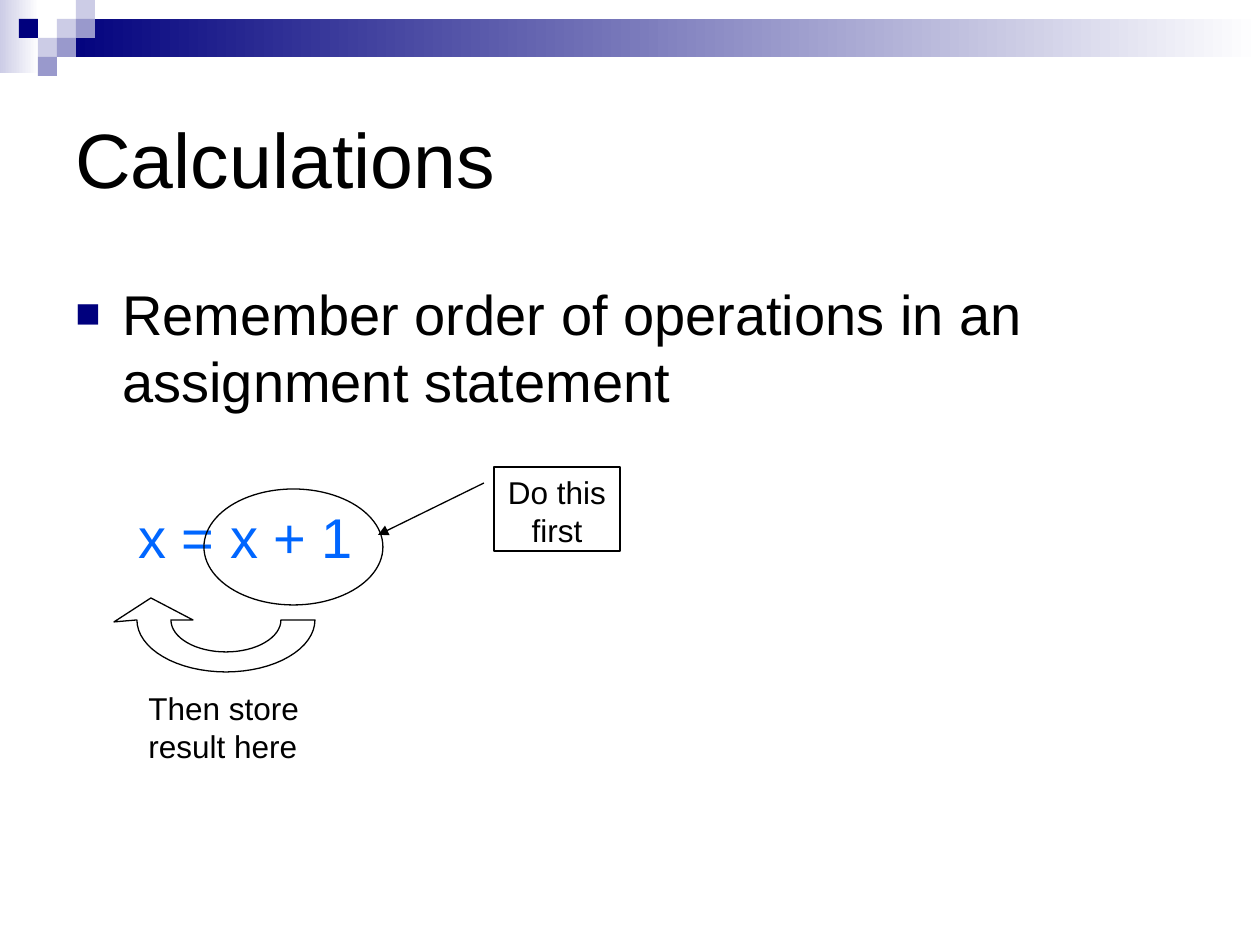
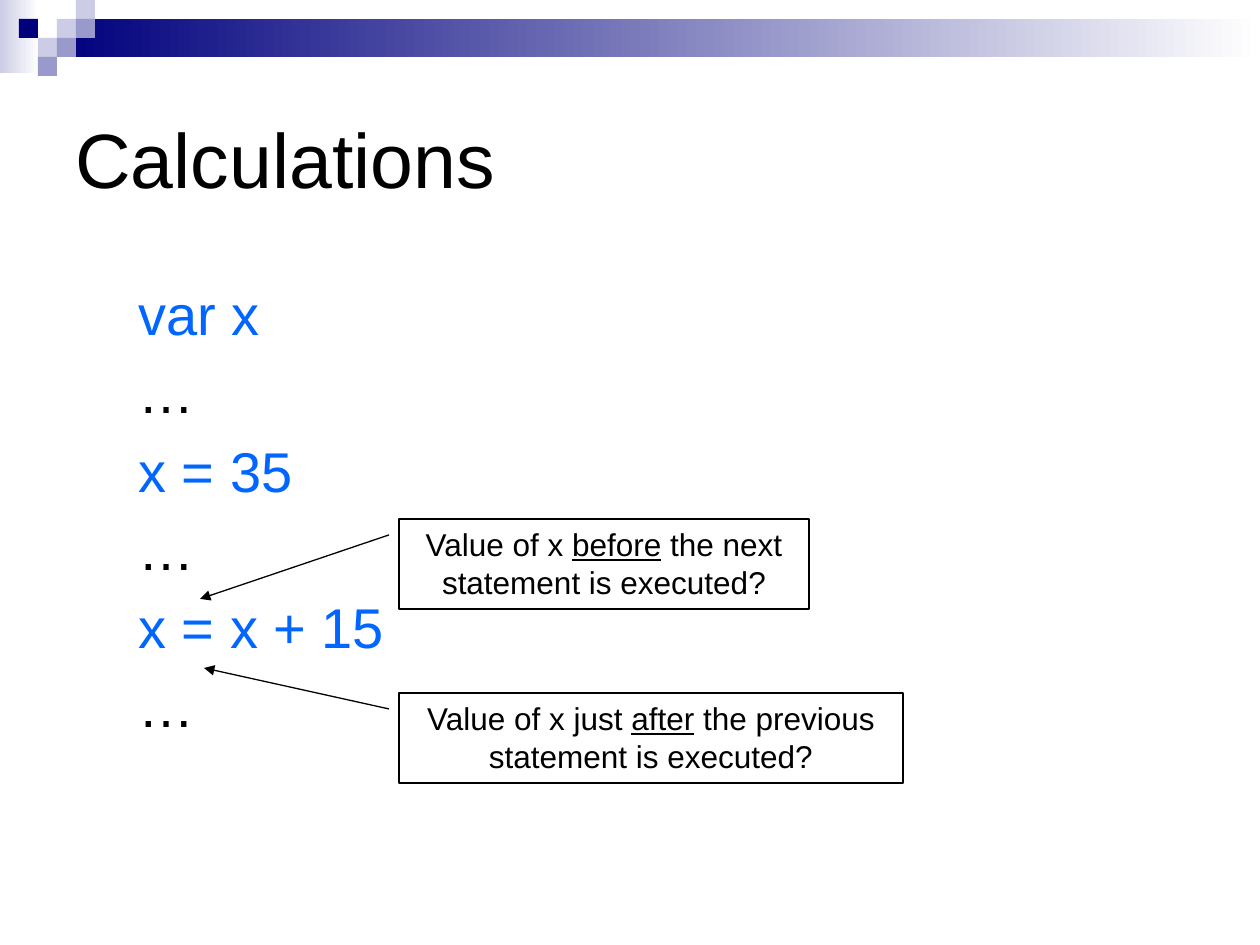
from math import cos, pi, sin

from lxml import etree
from pptx import Presentation
from pptx.dml.color import RGBColor
from pptx.enum.shapes import MSO_SHAPE
from pptx.enum.text import MSO_ANCHOR, PP_ALIGN
from pptx.oxml.ns import qn
from pptx.util import Pt

RECTANGLE, OVAL, CALLOUT = MSO_SHAPE.RECTANGLE, MSO_SHAPE.OVAL, MSO_SHAPE.LINE_CALLOUT_1
TOP, MIDDLE = MSO_ANCHOR.TOP, MSO_ANCHOR.MIDDLE
LEFT, CENTER = PP_ALIGN.LEFT, PP_ALIGN.CENTER

BLACK = RGBColor(0x00, 0x00, 0x00)
WHITE = RGBColor(0xFF, 0xFF, 0xFF)
NAVY = RGBColor(0x00, 0x00, 0x7D)
LAVENDER = RGBColor(0xCC, 0xCC, 0xE6)
PERIWINKLE = RGBColor(0x99, 0x99, 0xCC)
CODE_BLUE = RGBColor(0x00, 0x66, 0xFF)

FONT = "Arial"
EMU_PER_PX = 914400 / 126
SLIDE_SIZE = (1260, 945)
TITLE_BOX = (63, 63, 1134, 189)
BODY_BOX = (63, 273, 1134, 536)
TILE = 19
TILES = [(3, 0, LAVENDER), (1, 1, NAVY), (3, 1, LAVENDER), (4, 1, PERIWINKLE),
         (2, 2, LAVENDER), (3, 2, PERIWINKLE), (2, 3, PERIWINKLE)]
TILES[2:3] = [(3, 1, LAVENDER)]
TILES[0] = (4, 0, LAVENDER)
BODY_GAP = 6.4
CODE_INDENT = 63


def px(length):
    """Turn pixels into EMU."""
    return round(length * EMU_PER_PX)


def add_run(paragraph, text, size, color=BLACK, underline=False):
    """Add one run of text in the deck's font."""
    run = paragraph.add_run()
    run.text = text
    run.font.name = FONT
    run.font.size = Pt(size)
    run.font.color.rgb = color
    run.font.underline = underline


def add_text_area(slide, box, anchor=TOP):
    """Add a wrapping text box and return its frame."""
    frame = slide.shapes.add_textbox(*map(px, box)).text_frame
    frame.word_wrap = True
    frame.vertical_anchor = anchor
    return frame


def add_block(slide, box, *colors):
    """Add a borderless rectangle, plain or fading between two colours."""
    block = slide.shapes.add_shape(RECTANGLE, *map(px, box))
    block.shadow.inherit = False
    block.line.fill.background()
    if len(colors) == 1:
        block.fill.solid()
        block.fill.fore_color.rgb = colors[0]
        return
    block.fill.gradient()
    block.fill.gradient_angle = 0
    for stop, color in zip(block.fill.gradient_stops, colors):
        stop.color.rgb = color


def outline(shape):
    """Leave a shape unfilled with a thin black line."""
    shape.shadow.inherit = False
    shape.fill.background()
    shape.line.color.rgb = BLACK
    shape.line.width = Pt(0.75)


def add_header(slide):
    """Draw the fading bands and the tile pattern over them."""
    add_block(slide, (0, 0, 39, 73), LAVENDER, WHITE)
    add_block(slide, (3 * TILE, TILE, SLIDE_SIZE[0] - 3 * TILE, 2 * TILE), NAVY, WHITE)
    for column, row, color in TILES:
        add_block(slide, (column * TILE, row * TILE, TILE, TILE), color)


def add_body_line(frame, text, color=BLACK, gap=BODY_GAP, indent=CODE_INDENT):
    """Add a paragraph to the body and return it."""
    paragraph = frame.paragraphs[0]
    if paragraph.runs:
        paragraph = frame.add_paragraph()
    paragraph.space_before = Pt(gap)
    properties = paragraph._p.get_or_add_pPr()
    properties.set("marL", str(px(indent)))
    properties.set("indent", "0")
    add_run(paragraph, text, 32, color)
    return paragraph


def add_bullet(paragraph, hang):
    """Hang a small navy square in front of a paragraph."""
    properties = paragraph._p.get_or_add_pPr()
    properties.set("indent", str(-px(hang)))
    color = etree.SubElement(properties, qn("a:buClr"))
    etree.SubElement(color, qn("a:srgbClr"), val=str(NAVY))
    etree.SubElement(properties, qn("a:buSzPct"), val="75000")
    etree.SubElement(properties, qn("a:buFont"), typeface=FONT)
    etree.SubElement(properties, qn("a:buChar"), char="■")


def add_callout(slide, box, tip, parts):
    """Add a bordered note with an arrow to tip; parts alternate plain and underlined."""
    left, top, width, height = box
    callout = slide.shapes.add_shape(CALLOUT, *map(px, box))
    outline(callout)
    tail_start = (left - 10, top + 16)
    ends = [((y - top) / height, (x - left) / width) for x, y in (tail_start, tip)]
    for index, value in enumerate(ends[0] + ends[1]):
        callout.adjustments[index] = value
    etree.SubElement(callout.line._get_or_add_ln(), qn("a:tailEnd"), type="triangle")
    frame = callout.text_frame
    frame.word_wrap = True
    frame.vertical_anchor = TOP
    note = frame.paragraphs[0]
    note.alignment = CENTER
    for index, text in enumerate(parts):
        add_run(note, text, 18, underline=index % 2 == 1)


def half_ellipse(center, radii, steps=32):
    """List points along the lower half of an ellipse, right to left."""
    angles = [pi * step / steps for step in range(steps + 1)]
    return [(center[0] + radii[0] * cos(a), center[1] + radii[1] * sin(a)) for a in angles]


def add_store_arrow(slide, left, top):
    """Draw the curved arrow that leads back to the variable."""
    center = (112, 22)
    outer = half_ellipse(center, (89, 52))
    inner = half_ellipse(center, (55, 32))
    head = [(0, 24), (37, 0), (79, 22)]
    points = [(px(left + x), px(top + y)) for x, y in outer + head + inner[::-1]]
    builder = slide.shapes.build_freeform(*points[0])
    builder.add_line_segments(points[1:], close=True)
    outline(builder.convert_to_shape())


def add_calculation_slide(deck):
    """Add a slide with the shared header and title; return it with its body."""
    slide = deck.slides.add_slide(deck.slide_layouts[6])
    add_header(slide)
    title = add_text_area(slide, TITLE_BOX, MIDDLE).paragraphs[0]
    title.alignment = LEFT
    add_run(title, "Calculations", 44)
    return slide, add_text_area(slide, BODY_BOX)


def add_order_slide(deck):
    """Show the order of operations in an assignment."""
    slide, body = add_calculation_slide(deck)
    reminder = add_body_line(
        body, "Remember order of operations in an assignment statement", indent=47)
    add_bullet(reminder, 47)
    add_body_line(body, "x = x + 1", CODE_BLUE, gap=51)
    outline(slide.shapes.add_shape(OVAL, *map(px, (204, 489, 179, 116))))
    add_callout(slide, (494, 467, 126, 84), (378, 535), ["Do this first"])
    add_store_arrow(slide, 114, 598)
    caption = add_text_area(slide, (136, 683, 180, 88)).paragraphs[0]
    add_run(caption, "Then store result here", 18)


def add_value_slide(deck):
    """Ask for the value of x around a statement."""
    slide, body = add_calculation_slide(deck)
    for statement in ("var x", "x = 35", "x = x + 15"):
        add_body_line(body, statement, CODE_BLUE)
        add_body_line(body, "…")
    add_callout(slide, (399, 519, 410, 90), (200, 599),
                ["Value of x ", "before", " the next statement is executed?"])
    add_callout(slide, (399, 693, 504, 90), (204, 668),
                ["Value of x just ", "after", " the previous statement is executed?"])


def main():
    """Build and save the deck."""
    deck = Presentation()
    deck.slide_width, deck.slide_height = map(px, SLIDE_SIZE)
    add_order_slide(deck)
    add_value_slide(deck)
    deck.save("out.pptx")


if __name__ == "__main__":
    main()
